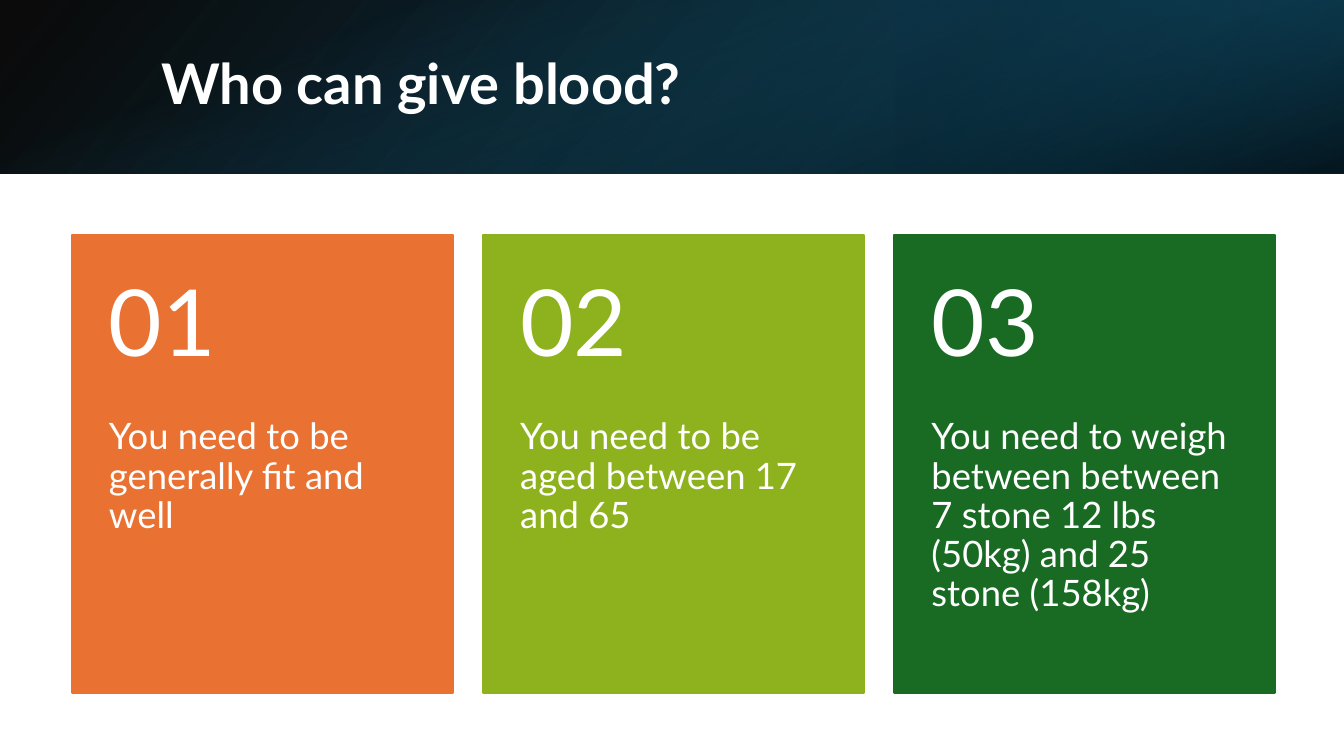
from dataclasses import dataclass

from lxml import etree
from pptx import Presentation
from pptx import util as u
from pptx.dml.color import RGBColor
from pptx.enum import shapes, text
from pptx.oxml.ns import nsdecls, qn

FONT = "Lato"
WHITE = "FFFFFF"

deck = Presentation()
deck.slide_width, deck.slide_height = u.Inches(13.33), u.Inches(7.5)
slide = deck.slides.add_slide(deck.slide_layouts[5])


def wide(share: float) -> int:
    """Percent of the slide's width."""
    return round(deck.slide_width * share / 100)


def high(share: float) -> int:
    """Percent of the slide's height."""
    return round(deck.slide_height * share / 100)


@dataclass
class Box:
    """A place on the slide, in percent of its width and height."""
    left: float
    top: float
    width: float
    height: float

    def emu(self) -> tuple[int, int, int, int]:
        return wide(self.left), high(self.top), wide(self.width), high(self.height)


@dataclass
class Stop:
    pos: int
    color: str
    alpha: int


@dataclass
class Layer:
    """One gradient sheet of the header band."""
    box: Box
    stops: list[Stop]
    angle: int
    turn: int = 0
    flip: bool = False


@dataclass
class Card:
    color: str
    label: str


def rgb(code: str) -> RGBColor:
    return RGBColor.from_string(code)


def rect(box: Box):
    shape = slide.shapes.add_shape(shapes.MSO_SHAPE.RECTANGLE, *box.emu())
    shape.shadow.inherit = False
    return shape


def shade(layer: Layer) -> None:
    shape = rect(layer.box)
    shape.line.fill.background()
    if layer.turn == 90:  # keep the centre, swap the sides
        x, y, w, h = layer.box.emu()
        shape.left, shape.top = x + (w - h) // 2, y + (h - w) // 2
        shape.width, shape.height = h, w
    shape.rotation = layer.turn
    props = shape.element.spPr
    if layer.flip:
        props.find(qn("a:xfrm")).set("flipH", "1")
    stops = "".join(
        f'<a:gs pos="{s.pos * 1000}"><a:srgbClr val="{s.color}">'
        f'<a:alpha val="{s.alpha * 1000}"/></a:srgbClr></a:gs>'
        for s in layer.stops)
    fill = etree.fromstring(
        f'<a:gradFill {nsdecls("a")} rotWithShape="1"><a:gsLst>{stops}</a:gsLst>'
        f'<a:lin ang="{layer.angle * 60000}" scaled="0"/></a:gradFill>')
    props.find(qn("a:prstGeom")).addnext(fill)


def write(shape, words: str, *, size: float, bold: bool = False,
          middle: bool = False, pad: tuple[float, float, float] | None = None) -> None:
    """Fill a shape with one paragraph; pad is side, top and bottom."""
    frame = shape.text_frame
    frame.word_wrap = True
    frame.auto_size = text.MSO_AUTO_SIZE.NONE
    frame.vertical_anchor = text.MSO_ANCHOR.MIDDLE if middle else text.MSO_ANCHOR.TOP
    if pad:
        side, top, base = pad
        frame.margin_left = frame.margin_right = wide(side)
        frame.margin_top, frame.margin_bottom = high(top), high(base)
    par = frame.paragraphs[0]
    par.alignment = text.PP_ALIGN.LEFT
    par.line_spacing = 0.9
    run = par.add_run()
    run.text = words
    run.font.name, run.font.size, run.font.bold = FONT, u.Pt(size), bold
    run.font.color.rgb = rgb(WHITE)


# Header band
BAND = 22.93
LAYERS = [
    Layer(Box(0, 0, 100, BAND),
          [Stop(0, "000000", 96), Stop(100, "104862", 100)], 140, flip=True),
    Layer(Box(66.67, 0, 33.33, BAND),
          [Stop(19, "0B3041", 68), Stop(100, "156082", 79)], 320, turn=180, flip=True),
    Layer(Box(0, 0, 100, BAND),
          [Stop(23, "156082", 0), Stop(99, "000000", 74)], 340, turn=90),
]
for layer in LAYERS:
    shade(layer)

# Title, brought in front of the band
title = slide.shapes.title
title.left, title.top, title.width, title.height = Box(11.25, 5.07, 82.36, 12.8).emu()
write(title, "Who can give blood?", size=40, bold=True, middle=True)
slide.shapes.element.append(title.element)

# Cards
LEFT, STEP, WIDTH = 5.33, 30.6, 28.36
TOP, HEAD, BODY = 31.07, 24.27, 36.27
CARDS = [
    Card("E97132", "You need to be generally fit and well"),
    Card("8EB21E", "You need to be aged between 17 and 65"),
    Card("196B24", "You need to weigh between between 7 stone 12 lbs (50kg) "
                   "and 25 stone (158kg)"),
]
for i, card in enumerate(CARDS):
    x = LEFT + i * STEP
    panel = rect(Box(x, TOP, WIDTH, HEAD + BODY))
    panel.fill.solid()
    panel.fill.fore_color.rgb = panel.line.color.rgb = rgb(card.color)
    panel.line.width = u.Pt(1.5)
    label = slide.shapes.add_textbox(*Box(x, TOP + HEAD, WIDTH, BODY).emu())
    write(label, card.label, size=26, pad=(2.78, 0, 4.8))
    number = slide.shapes.add_textbox(*Box(x, TOP, WIDTH, HEAD).emu())
    write(number, f"{i + 1:02}", size=66, middle=True, pad=(2.78, 2.4, 2.4))

deck.save("out.pptx")
